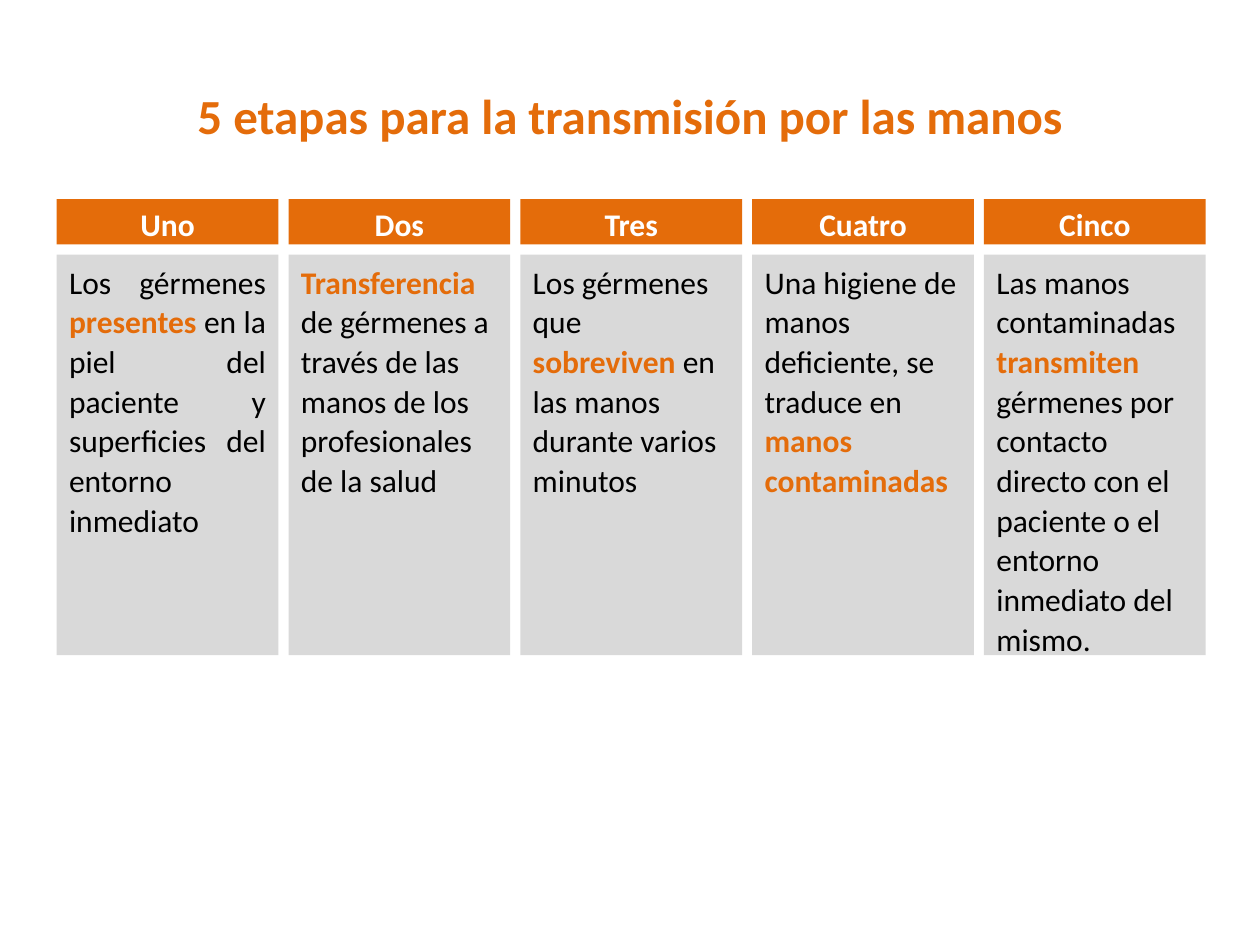
from pptx import Presentation
from pptx.dml.color import RGBColor
from pptx.enum.shapes import MSO_SHAPE
from pptx.enum.text import MSO_ANCHOR, PP_ALIGN
from pptx.util import Inches, Pt

RECT = MSO_SHAPE.RECTANGLE
TOP, MIDDLE = MSO_ANCHOR.TOP, MSO_ANCHOR.MIDDLE
LEFT, CENTER, JUSTIFY = PP_ALIGN.LEFT, PP_ALIGN.CENTER, PP_ALIGN.JUSTIFY

FONT = "Calibri"
COLORS = {"accent": "E46C0A", "panel": "D9D9D9", "text": "000000", "light": "FFFFFF"}

TITLE = "5 etapas para la transmisión por las manos"
# Heading, alignment, text before the key words, key words, text after
STAGES = [
    ("Uno", JUSTIFY, "Los gérmenes ", "presentes",
     " en la piel del paciente y superficies del entorno inmediato"),
    ("Dos", LEFT, "", "Transferencia",
     " de gérmenes a través de las manos de los profesionales de la salud"),
    ("Tres", LEFT, "Los gérmenes que ", "sobreviven",
     " en las manos durante varios minutos"),
    ("Cuatro", LEFT, "Una higiene de manos deficiente, se traduce en ",
     "manos contaminadas", ""),
    ("Cinco", LEFT, "Las manos contaminadas ", "transmiten",
     " gérmenes por contacto directo con el paciente o el entorno inmediato del mismo."),
]

MARGIN, GAP, WIDTH = 0.45, 0.08, 1.76
HEAD_TOP, HEAD_H, BODY_H = 1.58, 0.36, 3.18
STEP = WIDTH + GAP
BODY_TOP = HEAD_TOP + HEAD_H + GAP


def color(name):
    return RGBColor.from_string(COLORS[name])


def style(font, size, name, bold=False):
    font.name, font.size, font.bold = FONT, Pt(size), bold
    font.color.rgb = color(name)


def add_box(slide, left, top, height, fill, align):
    """Add a plain rectangle and return its first paragraph."""
    box = slide.shapes.add_shape(
        RECT, Inches(left), Inches(top), Inches(WIDTH), Inches(height))
    box.shadow.inherit = False
    box.fill.solid()
    box.fill.fore_color.rgb = color(fill)
    box.line.fill.background()
    frame = box.text_frame
    frame.word_wrap = True
    frame.vertical_anchor = TOP
    para = frame.paragraphs[0]
    para.alignment = align
    return para


def add_stage(slide, col, stage):
    head, align, before, key, after = stage
    left = MARGIN + col * STEP

    para = add_box(slide, left, BODY_TOP, BODY_H, "panel", align)
    para.line_spacing = 1.05
    for text, name in ((before, "text"), (key, "accent"), (after, "text")):
        if text:
            run = para.add_run()
            run.text = text
            style(run.font, 18, name, name == "accent")

    para = add_box(slide, left, HEAD_TOP, HEAD_H, "accent", CENTER)
    para.text = head
    style(para.font, 18, "light", True)


def add_title(slide):
    title = slide.shapes.title
    title.left, title.top = Inches(MARGIN), Inches(0.54)
    title.width, title.height = Inches(10 - 2 * MARGIN), Inches(0.74)
    title.text = TITLE
    title.text_frame.vertical_anchor = MIDDLE
    para = title.text_frame.paragraphs[0]
    para.alignment = CENTER
    style(para.font, 28, "accent", True)


def main():
    deck = Presentation()
    deck.slide_width, deck.slide_height = Inches(10), Inches(7.5)
    slide = deck.slides.add_slide(deck.slide_layouts[5])
    add_title(slide)
    for col, stage in enumerate(STAGES):
        add_stage(slide, col, stage)
    deck.save("out.pptx")


if __name__ == "__main__":
    main()
